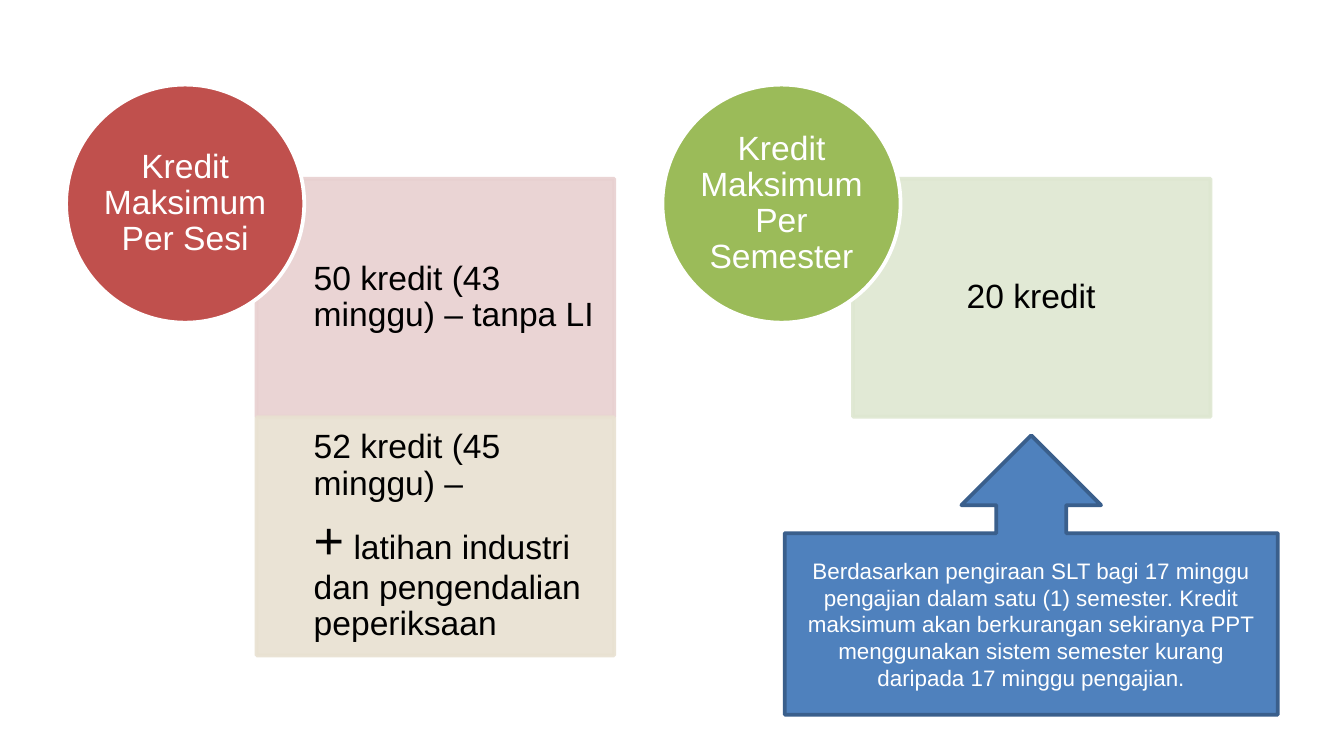
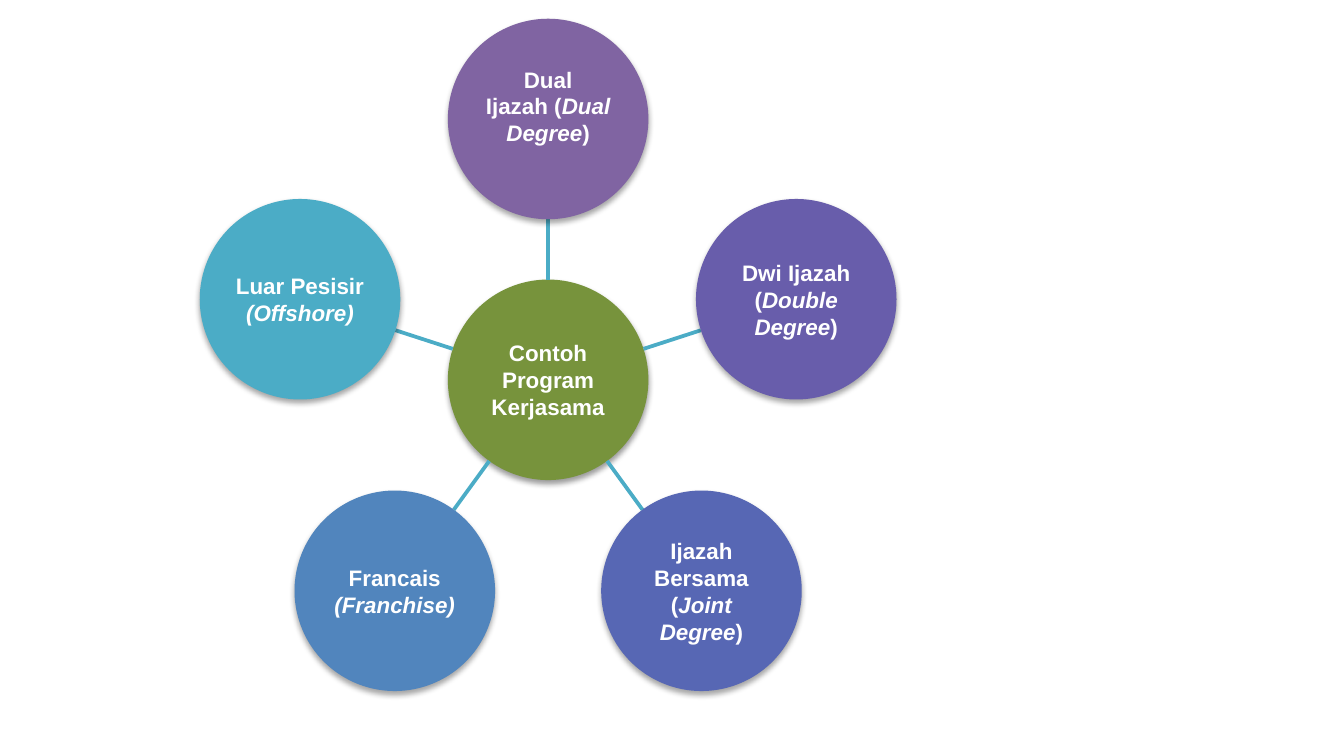
from math import cos, radians, sin

from lxml.etree import SubElement
from pptx import Presentation
from pptx.dml.color import RGBColor
from pptx.enum.shapes import MSO_CONNECTOR as Link, MSO_SHAPE as Kind
from pptx.enum.text import MSO_ANCHOR as Anchor, PP_ALIGN as Align
from pptx.oxml.ns import qn
from pptx.util import Cm, Pt

FONT = "Arial"
HUES = {
    "white": "FFFFFF", "black": "000000",
    "red": "C0504D", "pink": "E8D0D0", "sand": "E8E1D1",
    "green": "9BBB59", "mint": "DEE7D1",
    "blue": "4F81BD", "navy": "3A5F8C",
    "olive": "77933C", "plum": "8064A2", "violet": "685DAB",
    "indigo": "5767B4", "steel": "5185BD", "teal": "4BACC6",
}


def hue(name):
    return RGBColor.from_string(HUES[name])


def add_form(slide, kind, box, fill, edge=None):
    form = slide.shapes.add_shape(kind, *map(Cm, box))
    form.shadow.inherit = False
    form.fill.solid()
    form.fill.fore_color.rgb = hue(fill)
    if edge:
        form.line.color.rgb = hue(edge)
        form.line.width = Pt(2)
    else:
        form.line.fill.background()
    return form


def add_text(form, paras, size, color="white", align=Align.CENTER,
             pad=(0, 0, 0, 0), lead=None, after=0, bold=False):
    frame = form.text_frame
    frame.word_wrap = True
    frame.vertical_anchor = Anchor.MIDDLE
    (frame.margin_left, frame.margin_top,
     frame.margin_right, frame.margin_bottom) = map(Cm, pad)
    for num, runs in enumerate(paras):
        para = frame.add_paragraph() if num else frame.paragraphs[0]
        para.alignment = align
        if lead:
            para.line_spacing = lead
        if num < len(paras) - 1:
            para.space_after = Pt(after)
        for words, style in runs:
            run = para.add_run()
            run.text = words
            font = run.font
            font.name = FONT
            font.size = Pt(style.get("size", size))
            font.bold = bold
            font.italic = style.get("italic", False)
            font.color.rgb = hue(color)


def fade(form, share):
    for tint in form._element.spPr.iter(qn("a:srgbClr")):
        SubElement(tint, qn("a:alpha"), val=str(share * 1000))


def cast(form, share):
    effect = form._element.spPr.find(qn("a:effectLst"))
    shade = SubElement(effect, qn("a:outerShdw"), blurRad=str(Pt(3.1)),
                       dist=str(Pt(1.8)), dir="5400000", rotWithShape="0")
    tint = SubElement(shade, qn("a:srgbClr"), val=HUES["black"])
    SubElement(tint, qn("a:alpha"), val=str(share * 1000))


def add_card(slide, left, top, fill, paras, inset=1.08):
    card = add_form(slide, Kind.RECTANGLE, (left, top, 6.76, 4.5), fill, fill)
    fade(card, 90)
    add_text(card, paras, 18, "black", Align.LEFT,
             (inset, 0.36, 0.36, 0.36), 0.9, 6.3)


def add_badge(slide, left, fill, title):
    badge = add_form(slide, Kind.OVAL, (left, 1.6, 4.5, 4.5), fill, "white")
    add_text(badge, [[(title, {})]], 18, lead=0.9)


def add_node(slide, x, y, size, fill, paras, share=35, foot=0.03):
    box = (x - size / 2, y - size / 2, size, size)
    node = add_form(slide, Kind.OVAL, box, fill)
    cast(node, share)
    add_text(node, paras, 12, pad=(0.03, 0.03, 0.03, foot), bold=True)


def add_spoke(slide, start, end):
    spoke = slide.shapes.add_connector(
        Link.STRAIGHT, *map(Cm, (*start, *end)))
    spoke.line.color.rgb = hue("teal")
    spoke.line.width = Pt(2)
    SubElement(spoke._element.spPr, qn("a:effectLst"))


def add_credits(slide):
    plus = [("+", {"size": 28}),
            (" latihan industri dan pengendalian peperiksaan", {})]
    cols = [
        ("red", "Kredit Maksimum Per Sesi", 1.08, [
            ("pink", [[("50 kredit (43 minggu) – tanpa LI", {})]]),
            ("sand", [[("52 kredit (45 minggu) –", {})], plus]),
        ]),
        ("green", "Kredit Maksimum Per Semester", 2.15, [
            ("mint", [[("20 kredit", {})]]),
        ]),
    ]
    for col, (fill, title, inset, cards) in enumerate(cols):
        left = 1.25 + col * 11.27
        for row, (tone, paras) in enumerate(cards):
            add_card(slide, left + 3.6, 3.38 + row * 4.51, tone, paras, inset)
        add_badge(slide, left, fill, title)
    note = add_form(slide, Kind.UP_ARROW_CALLOUT,
                    (14.83, 8.23, 9.32, 5.28), "blue", "navy")
    add_text(note, [[(
        "Berdasarkan pengiraan SLT bagi 17 minggu pengajian dalam satu (1) "
        "semester. Kredit maksimum akan berkurangan sekiranya PPT "
        "menggunakan sistem semester kurang daripada 17 minggu pengajian.",
        {})]], 12, pad=(0.25, 0.13, 0.25, 0.13))


def add_wheel(slide):
    x, y, reach, size = 10.36, 7.18, 4.93, 3.79
    slant = {"italic": True}
    nodes = [
        ("plum", [[("Dual", {})],
                  [("Ijazah (", {}), ("Dual Degree", slant), (")", {})]], 0.52),
        ("violet", [[("Dwi Ijazah (", {}), ("Double Degree", slant),
                     (")", {})]], 0.03),
        ("indigo", [[("Ijazah Bersama (", {}), ("Joint Degree", slant),
                     (")", {})]], 0.03),
        ("steel", [[("Francais ", {}), ("(Franchise)", slant)]], 0.03),
        ("teal", [[("Luar Pesisir ", {}), ("(Offshore)", slant)]], 0.03),
    ]

    def spot(turn, dist):
        return x + dist * sin(turn), y - dist * cos(turn)

    add_node(slide, x, y, size, "olive",
             [[("Contoh Program Kerjasama", {})]], 38)
    for num, (fill, paras, foot) in enumerate(nodes):
        turn = radians(num * 360 / len(nodes))
        add_spoke(slide, spot(turn, size / 2), spot(turn, reach - size / 2))
        add_node(slide, *spot(turn, reach), size, fill, paras, foot=foot)


def main():
    deck = Presentation()
    deck.slide_width, deck.slide_height = Cm(25.4), Cm(14.29)
    for build in (add_credits, add_wheel):
        build(deck.slides.add_slide(deck.slide_layouts[6]))
    deck.save("out.pptx")


if __name__ == "__main__":
    main()
